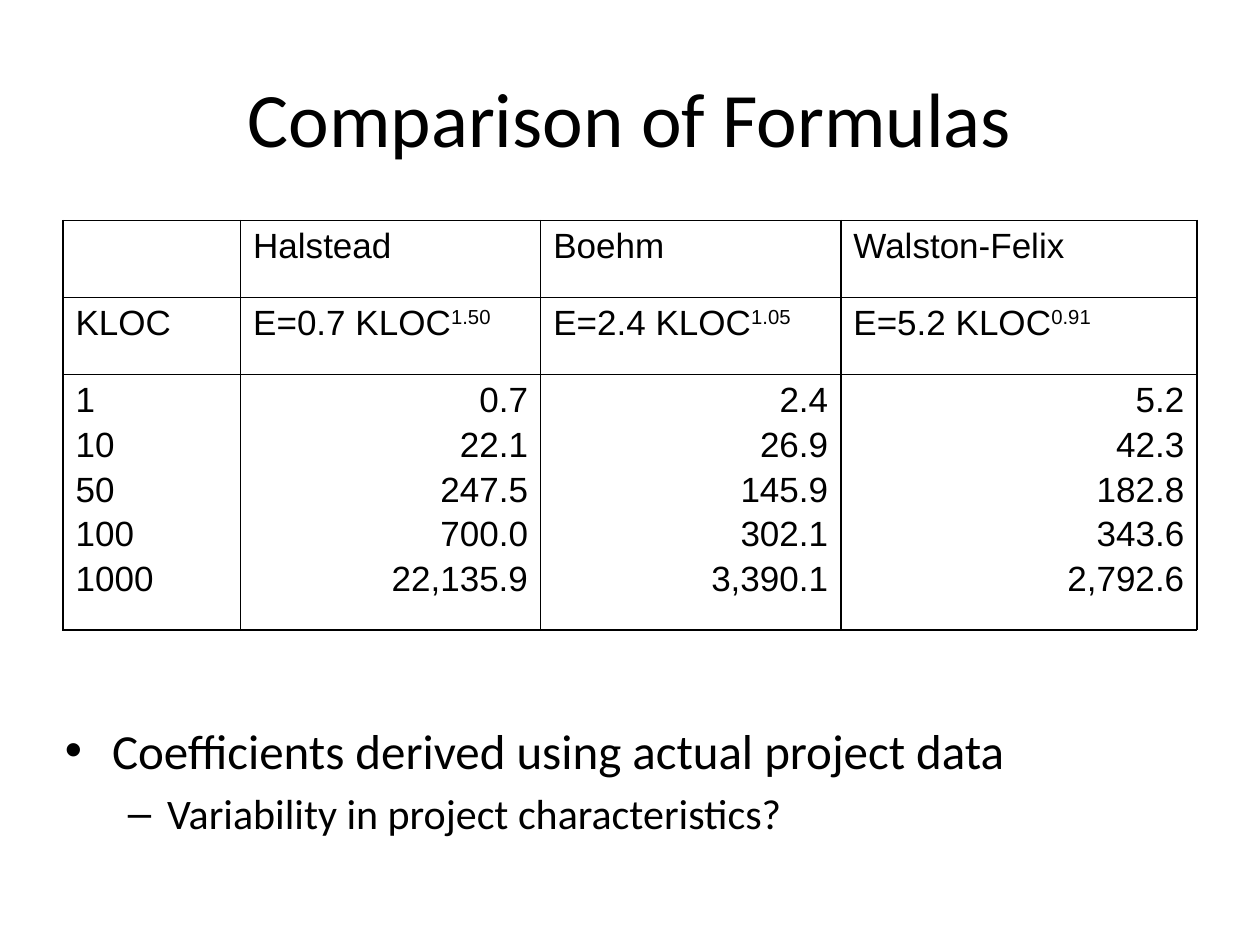
import lxml.etree
import pptx
import pptx.dml.color
import pptx.enum.text
import pptx.oxml.ns
import pptx.util

Pt = pptx.util.Pt
qn = pptx.oxml.ns.qn
ALIGN = pptx.enum.text.PP_ALIGN
ANCHOR = pptx.enum.text.MSO_ANCHOR


def color(value):
    return pptx.dml.color.RGBColor.from_string(value)


def apply(target, formats):
    for name, value in formats.items():
        setattr(target, name, value)


class SlideBuilder:
    ink = "000000"
    title_font = {"name": "Calibri", "size": Pt(44)}
    table_font = {"name": "Arial", "size": Pt(20)}
    bullet_fonts = (
        {"name": "Calibri", "size": Pt(28)},
        {"name": "Calibri", "size": Pt(24)},
    )
    bullet_marks = (("•", 27, 27), ("–", 58.5, 22.5))

    def __init__(self, page):
        self.page = page

    def add_span(self, para, text, font, raised=False):
        span = para.add_run()
        span.text = text
        apply(span.font, font)
        span.font.color.rgb = color(self.ink)
        if raised:
            span.font._element.set("baseline", "30000")

    def add_box(self, left, top, width, height, anchor):
        box = self.page.shapes.add_textbox(Pt(left), Pt(top), Pt(width), Pt(height))
        apply(box.text_frame, {"word_wrap": True, "vertical_anchor": anchor})
        return box.text_frame

    def add_title(self, text, *place):
        para = self.add_box(*place, ANCHOR.MIDDLE).paragraphs[0]
        para.alignment = ALIGN.CENTER
        self.add_span(para, text, self.title_font)

    def add_bullets(self, items, *place):
        frame = self.add_box(*place, ANCHOR.TOP)
        for index, (level, text) in enumerate(items):
            para = frame.add_paragraph() if index else frame.paragraphs[0]
            font = self.bullet_fonts[level]
            mark, margin, hang = self.bullet_marks[level]
            apply(para, {"level": level, "space_before": int(font["size"] * 0.2) if index else 0})
            properties = para._p.get_or_add_pPr()
            properties.set("marL", str(Pt(margin)))
            properties.set("indent", str(-Pt(hang)))
            lxml.etree.SubElement(properties, qn("a:buFont")).set("typeface", "Arial")
            lxml.etree.SubElement(properties, qn("a:buChar")).set("char", mark)
            self.add_span(para, text, font)

    def add_borders(self, cell, widths):
        properties = cell._tc.get_or_add_tcPr()
        for side, width in zip("LRTB", widths):
            line = lxml.etree.SubElement(properties, qn(f"a:ln{side}"), w=str(Pt(width)))
            fill = lxml.etree.SubElement(line, qn("a:solidFill"))
            lxml.etree.SubElement(fill, qn("a:srgbClr"), val=self.ink)

    def fill_cell(self, cell, lines, alignment):
        for index, (text, exponent) in enumerate(lines):
            para = cell.text_frame.add_paragraph() if index else cell.text_frame.paragraphs[0]
            apply(para, {"alignment": alignment, "space_before": Pt(3.3 if index else 0)})
            self.add_span(para, text, self.table_font)
            if exponent:
                self.add_span(para, exponent, self.table_font, raised=True)

    def add_table(self, rows, widths, heights, left, top):
        table = self.page.shapes.add_table(
            len(rows), len(widths), Pt(left), Pt(top), Pt(sum(widths)), Pt(sum(heights))
        ).table
        apply(table, {"first_row": False, "horz_banding": False})
        for column, width in zip(table.columns, widths):
            column.width = Pt(width)
        last_row, last_column = len(rows) - 1, len(widths) - 1
        for row, (lines_by_cell, height) in enumerate(zip(rows, heights)):
            table.rows[row].height = Pt(height)
            for column, lines in enumerate(lines_by_cell):
                cell = table.cell(row, column)
                outer = (column == 0, column == last_column, row == 0, row == last_row)
                self.add_borders(cell, [0.75 if edge else 1 for edge in outer])
                cell.fill.background()
                numeric = row == last_row and column > 0
                self.fill_cell(cell, lines, ALIGN.RIGHT if numeric else ALIGN.LEFT)


def plain(*texts):
    return [(text, None) for text in texts]


def main():
    deck = pptx.Presentation()
    apply(deck, {"slide_width": Pt(720), "slide_height": Pt(540)})
    builder = SlideBuilder(deck.slides.add_slide(deck.slide_layouts[6]))
    builder.add_title("Comparison of Formulas", 36, 21.6, 648, 90)
    rows = [
        [[], plain("Halstead"), plain("Boehm"), plain("Walston-Felix")],
        [
            plain("KLOC"),
            [("E=0.7 KLOC", "1.50")],
            [("E=2.4 KLOC", "1.05")],
            [("E=5.2 KLOC", "0.91")],
        ],
        [
            plain("1", "10", "50", "100", "1000"),
            plain("0.7", "22.1", "247.5", "700.0", "22,135.9"),
            plain("2.4", "26.9", "145.9", "302.1", "3,390.1"),
            plain("5.2", "42.3", "182.8", "343.6", "2,792.6"),
        ],
    ]
    builder.add_table(rows, (101.5, 171.5, 171.5, 203.5), (44, 44, 146), 36, 126)
    bullets = [
        (0, "Coefficients derived using actual project data"),
        (1, "Variability in project characteristics?"),
    ]
    builder.add_bullets(bullets, 30, 408, 648, 115)
    deck.save("out.pptx")


if __name__ == "__main__":
    main()
